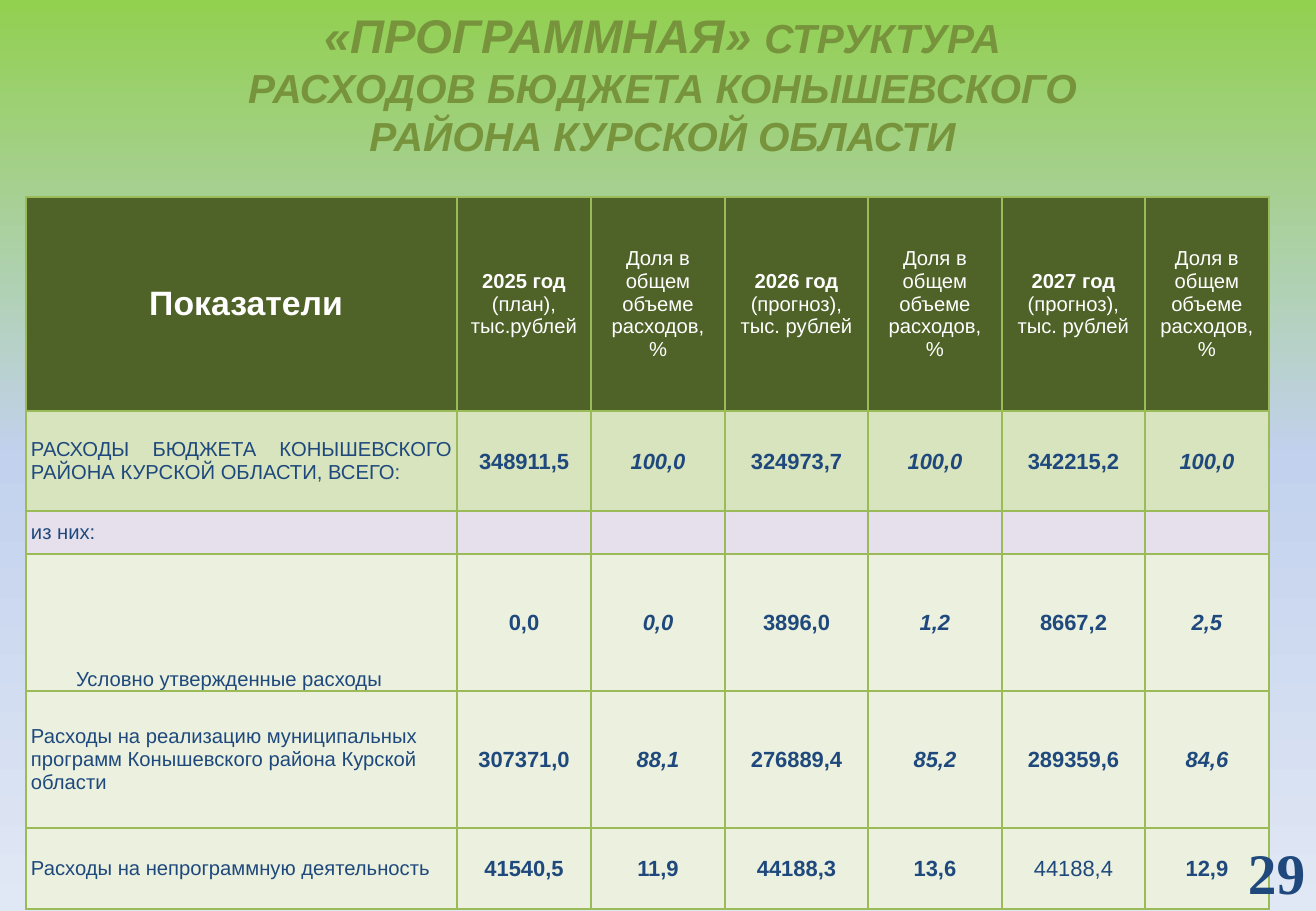
from copy import deepcopy

from lxml import etree
from pptx import Presentation
from pptx import util as u
from pptx.dml.color import RGBColor
from pptx.enum import text
from pptx.oxml.ns import qn

TITLE = [("«ПРОГРАММНАЯ» ", 28),
         ("СТРУКТУРА РАСХОДОВ БЮДЖЕТА КОНЫШЕВСКОГО РАЙОНА КУРСКОЙ ОБЛАСТИ", 24)]
PAGE = "29"
CORNER = " Показатели"
YEARS = [("2025 год", "(план), тыс.рублей"),
         ("2026 год", "(прогноз), тыс. рублей"),
         ("2027 год", "(прогноз), тыс. рублей")]
SHARE = "Доля в общем объеме расходов, %"

OLIVE = RGBColor(0x77, 0x93, 0x3C)
DARK = RGBColor(0x4F, 0x62, 0x28)
GREEN = RGBColor(0xD7, 0xE4, 0xBD)
LILAC = RGBColor(0xE6, 0xE0, 0xEC)
PALE = RGBColor(0xEB, 0xF1, 0xDE)
NAVY = RGBColor(0x1F, 0x49, 0x7D)
WHITE = RGBColor(0xFF, 0xFF, 0xFF)
BORDER = RGBColor(0x9B, 0xBB, 0x59)
BACKGROUND = [(0, RGBColor(0x92, 0xD0, 0x50)),
              (0.5, RGBColor(0xC2, 0xD1, 0xED)),
              (1, RGBColor(0xE1, 0xE8, 0xF5))]

ROWS = [
    ("РАСХОДЫ БЮДЖЕТА КОНЫШЕВСКОГО РАЙОНА КУРСКОЙ ОБЛАСТИ, ВСЕГО:", GREEN,
     ["348911,5", "100,0", "324973,7", "100,0", "342215,2", "100,0"]),
    ("из них:", LILAC, [""] * 6),
    ("Условно утвержденные расходы", PALE,
     ["0,0", "0,0", "3896,0", "1,2", "8667,2", "2,5"]),
    ("Расходы на реализацию муниципальных программ Конышевского района "
     "Курской области", PALE,
     ["307371,0", "88,1", "276889,4", "85,2", "289359,6", "84,6"]),
    ("Расходы на непрограммную деятельность", PALE,
     ["41540,5", "11,9", "44188,3", "13,6", "44188,4", "12,9"]),
]
TOTAL, CONDITIONAL, NON_PROGRAM = 0, 2, 4
PLAIN_VALUE = "44188,4"

SLIDE = (1316, 911)
TITLE_BOX = (227, 0, 871, 168)
PAGE_BOX = (1236, 831, 83, 81)
TABLE_AT = (26, 197)
COL_WIDTHS = [431, 134, 134, 143, 134, 143, 124]
ROW_HEIGHTS = [214, 100, 43, 137, 137, 81]
HEADER_INSETS = (13, 6, 13, 6)
LABEL_INSETS = (5, 5, 5, 5)
CONDITIONAL_INSETS = (50, 1, 1, 0)
VALUE_INSETS = (1, 1, 1, 0)

CENTER, LEFT, JUSTIFY = (text.PP_ALIGN.CENTER, text.PP_ALIGN.LEFT,
                         text.PP_ALIGN.JUSTIFY)
MIDDLE, BOTTOM = text.MSO_ANCHOR.MIDDLE, text.MSO_ANCHOR.BOTTOM


def px(n):
    return u.Emu(n * 7526)


def add_run(p, words, size, color, bold=False, italic=False, font="Arial"):
    r = p.add_run()
    r.text = words
    r.font.name, r.font.size = font, u.Pt(size)
    r.font.bold, r.font.italic = bold, italic
    r.font.color.rgb = color


def add_text_box(slide, box, wrap):
    tf = slide.shapes.add_textbox(*map(px, box)).text_frame
    tf.word_wrap = wrap
    return tf.paragraphs[0]


def paint_background(slide):
    fill = slide.background.fill
    fill.gradient()
    fill.gradient_angle = 270
    first = slide.background._cSld.find(".//" + qn("a:gs"))
    first.addnext(deepcopy(first))
    for stop, (position, color) in zip(fill.gradient_stops, BACKGROUND):
        stop.position = position
        stop.color.rgb = color


def format_cell(cell, color, insets, anchor=MIDDLE):
    """Set borders, fill, insets and anchor of a table cell."""
    tc_pr = cell._tc.get_or_add_tcPr()
    for side in ("a:lnL", "a:lnR", "a:lnT", "a:lnB"):
        ln = etree.SubElement(tc_pr, qn(side), w=str(u.Pt(1)))
        solid = etree.SubElement(ln, qn("a:solidFill"))
        etree.SubElement(solid, qn("a:srgbClr"), val=str(BORDER))
    cell.fill.solid()
    cell.fill.fore_color.rgb = color
    (cell.margin_left, cell.margin_top,
     cell.margin_right, cell.margin_bottom) = map(px, insets)
    cell.vertical_anchor = anchor


def fill_cell(cell, lines, align, color):
    """Write one paragraph per (words, size, bold, italic) line."""
    tf = cell.text_frame
    for i, (words, size, bold, italic) in enumerate(lines):
        p = tf.add_paragraph() if i else tf.paragraphs[0]
        p.alignment = align
        if words:
            add_run(p, words, size, color, bold, italic)
        else:
            etree.SubElement(p._p, qn("a:endParaRPr"), sz=str(size * 100))


def add_budget_table(slide):
    table = slide.shapes.add_table(
        len(ROW_HEIGHTS), len(COL_WIDTHS), *map(px, TABLE_AT),
        px(sum(COL_WIDTHS)), px(sum(ROW_HEIGHTS))).table
    for column, width in zip(table.columns, COL_WIDTHS):
        column.width = px(width)
    for row, height in zip(table.rows, ROW_HEIGHTS):
        row.height = px(height)

    header = [[(CORNER, 20, True, False)]]
    for year, unit in YEARS:
        header.append([(year, 12, True, False), (unit, 12, False, False)])
        header.append([(SHARE, 12, False, False)])
    for c, lines in enumerate(header):
        cell = table.cell(0, c)
        format_cell(cell, DARK, HEADER_INSETS)
        fill_cell(cell, lines, CENTER, WHITE)

    for i, (label, color, values) in enumerate(ROWS):
        cell = table.cell(i + 1, 0)
        if i == CONDITIONAL:
            format_cell(cell, color, CONDITIONAL_INSETS, BOTTOM)
        else:
            format_cell(cell, color, LABEL_INSETS)
        fill_cell(cell, [(label, 12, False, False)],
                  JUSTIFY if i == TOTAL else LEFT, NAVY)
        for c, value in enumerate(values, 1):
            cell = table.cell(i + 1, c)
            format_cell(cell, color, VALUE_INSETS)
            is_share = c % 2 == 0
            fill_cell(cell, [(value, 13, value != PLAIN_VALUE,
                              is_share and i != NON_PROGRAM)], CENTER, NAVY)


def main():
    prs = Presentation()
    prs.slide_width, prs.slide_height = map(px, SLIDE)
    slide = prs.slides.add_slide(prs.slide_layouts[6])
    paint_background(slide)

    p = add_text_box(slide, TITLE_BOX, True)
    p.alignment = CENTER
    for words, size in TITLE:
        add_run(p, words, size, OLIVE, True, True)

    add_budget_table(slide)

    p = add_text_box(slide, PAGE_BOX, False)
    add_run(p, PAGE, 34, NAVY, True, font="Times New Roman")
    prs.save("out.pptx")


if __name__ == "__main__":
    main()
